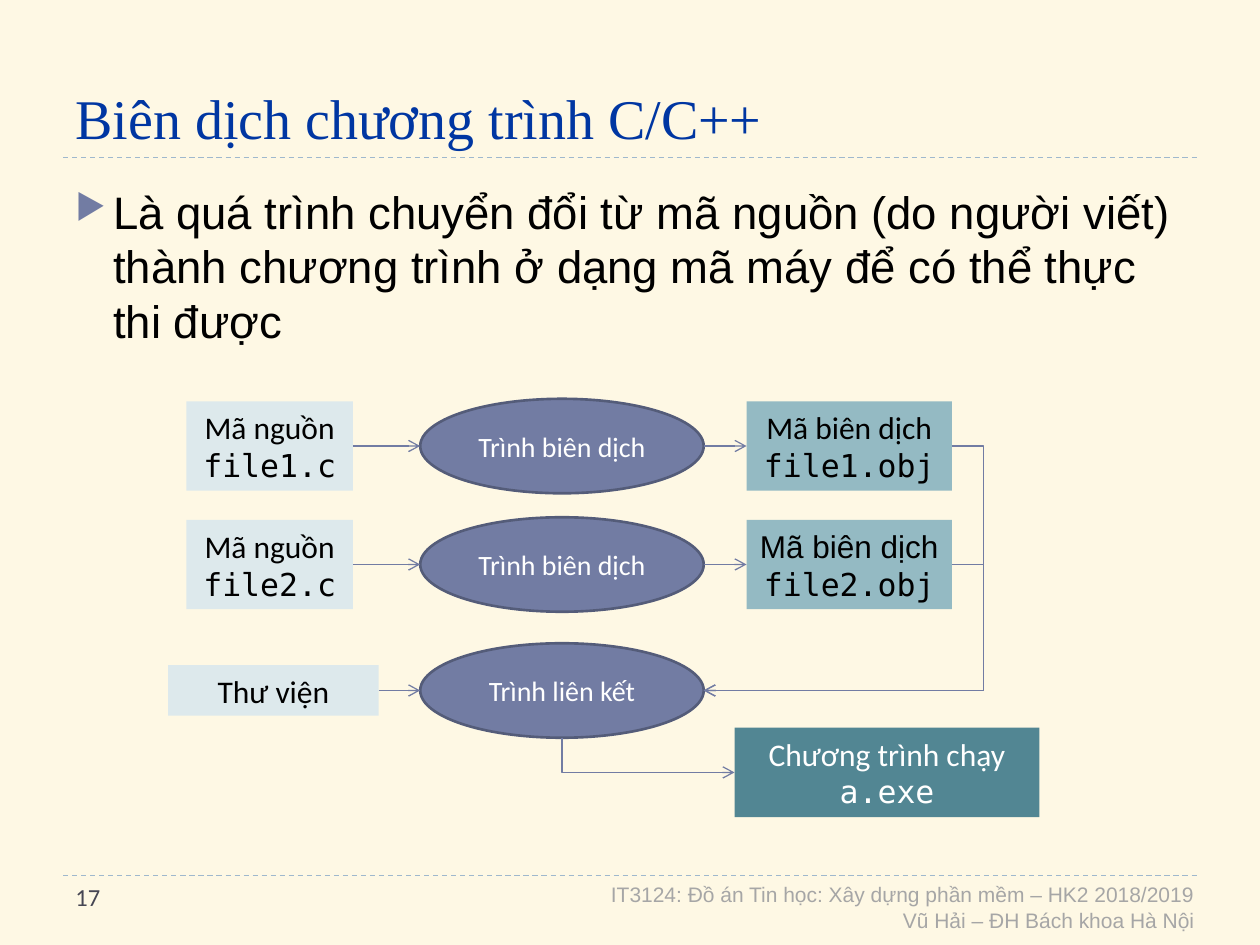
"""Build a slide on how C/C++ programs are compiled and linked."""
import dataclasses

import pptx
import pptx.dml.color
import pptx.enum.dml
import pptx.enum.shapes
import pptx.enum.text
import pptx.oxml.ns
import pptx.util
from lxml import etree

Inches = pptx.util.Inches
ALIGN = pptx.enum.text.PP_ALIGN
ANCHOR = pptx.enum.text.MSO_ANCHOR
SHAPE = pptx.enum.shapes.MSO_SHAPE
CONNECTOR = pptx.enum.shapes.MSO_CONNECTOR


@dataclasses.dataclass(frozen=True)
class Theme:
    background: str = "FEF8E4"
    title: str = "0036A2"
    rule: str = "9FB8CD"
    accent: str = "727CA3"
    accent_edge: str = "545C79"
    source: str = "DDE9EC"
    compiled: str = "94BAC3"
    program: str = "528693"
    dark: str = "000000"
    light: str = "FFFFFF"
    number: str = "464653"
    footer: str = "A6A6A6"
    sans: str = "Arial"
    label: str = "Calibri"
    serif: str = "Times New Roman"
    mono: str = "DejaVu Sans Mono"
    title_size: int = 32
    body_size: int = 26
    box_size: int = 18
    oval_size: int = 16
    number_size: int = 14
    footer_size: int = 12


THEME = Theme()

TITLE = "Biên dịch chương trình C/C++"
BODY = ("Là quá trình chuyển đổi từ mã nguồn (do người viết) thành "
        "chương trình ở dạng mã máy để có thể thực thi được")
FOOTER = ["IT3124: Đồ án Tin học: Xây dựng phần mềm – HK2 2018/2019",
          "Vũ Hải – ĐH Bách khoa Hà Nội"]
NUMBER = "17"

STYLES = {
    "source": (SHAPE.RECTANGLE, 1.32, 0.71, THEME.source, THEME.dark, THEME.box_size),
    "library": (SHAPE.RECTANGLE, 1.67, 0.4, THEME.source, THEME.dark, THEME.box_size),
    "tool": (SHAPE.OVAL, 2.25, 0.75, THEME.accent, THEME.light, THEME.oval_size),
    "compiled": (SHAPE.RECTANGLE, 1.63, 0.71, THEME.compiled, THEME.dark, THEME.box_size),
    "program": (SHAPE.RECTANGLE, 2.42, 0.71, THEME.program, THEME.light, THEME.box_size),
}
COLUMNS = {"source": 2.14, "library": 2.17, "tool": 4.46, "compiled": 6.74, "program": 7.04}
COMPILE_ROWS = [("file1", 3.54, THEME.label), ("file2", 4.48, THEME.sans)]
LINK_ROW, PROGRAM_ROW = 5.48, 6.13
RETURN_X = 7.81
RULE_ROWS = [1.25, 6.95]


def color(value):
    return pptx.dml.color.RGBColor.from_string(value)


def style_paragraph(paragraph, font, size, value, align=ALIGN.LEFT):
    paragraph.alignment = align
    for run in paragraph.runs:
        run.font.name = font
        run.font.size = pptx.util.Pt(size)
        run.font.color.rgb = color(value)


def add_text(slide, area, lines, font, size, value, align=ALIGN.LEFT):
    frame = slide.shapes.add_textbox(*map(Inches, area)).text_frame
    frame.word_wrap = True
    frame.text = "\n".join(lines)
    for paragraph in frame.paragraphs:
        style_paragraph(paragraph, font, size, value, align)
    return frame


def add_bullet(paragraph):
    properties = paragraph._p.get_or_add_pPr()
    properties.set("marL", str(Inches(0.3)))
    properties.set("indent", str(-Inches(0.3)))
    tag = pptx.oxml.ns.qn
    bullet_color = etree.SubElement(properties, tag("a:buClr"))
    etree.SubElement(bullet_color, tag("a:srgbClr"), val=THEME.accent)
    etree.SubElement(properties, tag("a:buSzPct"), val="76000")
    etree.SubElement(properties, tag("a:buChar"), char="▶")


def add_node(slide, style, row, lines, fonts):
    preset, width, height, fill, text_color, size = STYLES[style]
    area = (COLUMNS[style] - width / 2, row - height / 2, width, height)
    shape = slide.shapes.add_shape(preset, *map(Inches, area))
    shape.shadow.inherit = False
    shape.fill.solid()
    shape.fill.fore_color.rgb = color(fill)
    if preset == SHAPE.OVAL:
        shape.line.color.rgb = color(THEME.accent_edge)
        shape.line.width = pptx.util.Pt(1.5)
    else:
        shape.line.fill.background()
    frame = shape.text_frame
    frame.word_wrap = False
    frame.vertical_anchor = ANCHOR.MIDDLE
    frame.text = "\n".join(lines)
    for paragraph, font in zip(frame.paragraphs, fonts):
        style_paragraph(paragraph, font, size, text_color, ALIGN.CENTER)
    return shape


def side(shape, name):
    x = {"left": 0, "right": shape.width}.get(name, shape.width // 2)
    y = {"top": 0, "bottom": shape.height}.get(name, shape.height // 2)
    return shape.left + x, shape.top + y


def add_line(slide, kind, start, end, value, arrow=True):
    connector = slide.shapes.add_connector(kind, *start, *end)
    connector.line.color.rgb = color(value)
    connector.line.width = pptx.util.Pt(0.75)
    tag = pptx.oxml.ns.qn
    if arrow:
        etree.SubElement(connector.line._get_or_add_ln(), tag("a:tailEnd"), type="arrow")
    etree.SubElement(connector._element.spPr, tag("a:effectLst"))
    return connector


def add_arrow(slide, first, second):
    connector = add_line(slide, CONNECTOR.STRAIGHT, side(first, "right"),
                         side(second, "left"), THEME.accent)
    if first.auto_shape_type == SHAPE.RECTANGLE:
        connector.begin_connect(first, 3)
    if second.auto_shape_type == SHAPE.RECTANGLE:
        connector.end_connect(second, 1)


def add_return(slide, compiled, linker):
    start, end = side(compiled, "right"), side(linker, "right")
    connector = add_line(slide, CONNECTOR.ELBOW, start, end, THEME.accent)
    bend = round((start[0] - Inches(RETURN_X)) / (start[0] - end[0]) * 100000)
    guides = connector._element.spPr.find(".//" + pptx.oxml.ns.qn("a:avLst"))
    if guides is None:
        geometry = connector._element.spPr.find(pptx.oxml.ns.qn("a:prstGeom"))
        guides = etree.SubElement(geometry, pptx.oxml.ns.qn("a:avLst"))
    etree.SubElement(guides, pptx.oxml.ns.qn("a:gd"), name="adj1", fmla=f"val {bend}")


def add_corner(slide, linker, program):
    start, end = side(linker, "bottom"), side(program, "left")
    connector = add_line(slide, CONNECTOR.ELBOW, start, end, THEME.accent)
    across, down = end[0] - start[0], end[1] - start[1]
    properties = connector._element.spPr
    properties.find(pptx.oxml.ns.qn("a:prstGeom")).set("prst", "bentConnector2")
    properties.xfrm.set("rot", str(270 * 60000))
    properties.xfrm.set("flipH", "1")
    connector.left = start[0] + (across - down) // 2
    connector.top = start[1] + (down - across) // 2
    connector.width, connector.height = down, across


def add_diagram(slide):
    objects = []
    for name, row, label_font in COMPILE_ROWS:
        source = add_node(slide, "source", row, ["Mã nguồn", f"{name}.c"], [THEME.label, THEME.mono])
        compiler = add_node(slide, "tool", row, ["Trình biên dịch"], [THEME.label])
        compiled = add_node(slide, "compiled", row, ["Mã biên dịch", f"{name}.obj"],
                            [label_font, THEME.mono])
        add_arrow(slide, source, compiler)
        add_arrow(slide, compiler, compiled)
        objects.append(compiled)
    linker = add_node(slide, "tool", LINK_ROW, ["Trình liên kết"], [THEME.label])
    library = add_node(slide, "library", LINK_ROW, ["Thư viện"], [THEME.label])
    program = add_node(slide, "program", PROGRAM_ROW, ["Chương trình chạy", "a.exe"],
                       [THEME.label, THEME.mono])
    add_arrow(slide, library, linker)
    for compiled in objects:
        add_return(slide, compiled, linker)
    add_corner(slide, linker, program)


def main():
    presentation = pptx.Presentation()
    presentation.slide_width, presentation.slide_height = Inches(10), Inches(7.5)
    slide = presentation.slides.add_slide(presentation.slide_layouts[5])
    slide.background.fill.solid()
    slide.background.fill.fore_color.rgb = color(THEME.background)
    for row in RULE_ROWS:
        rule = add_line(slide, CONNECTOR.STRAIGHT, (Inches(0.5), Inches(row)),
                        (Inches(9.5), Inches(row)), THEME.rule, arrow=False)
        rule.line.dash_style = pptx.enum.dml.MSO_LINE.DASH
    title = slide.shapes.title
    title.left, title.top, title.width, title.height = map(Inches, (0.5, 0.17, 9, 1.08))
    title.text_frame.text = TITLE
    title.text_frame.auto_size = pptx.enum.text.MSO_AUTO_SIZE.NONE
    title.text_frame.vertical_anchor = ANCHOR.BOTTOM
    style_paragraph(title.text_frame.paragraphs[0], THEME.serif, THEME.title_size, THEME.title)
    body = add_text(slide, (0.5, 1.41, 9, 1.4), [BODY], THEME.sans, THEME.body_size, THEME.dark)
    add_bullet(body.paragraphs[0])
    add_text(slide, (4.08, 6.95, 5.5, 0.5), FOOTER, THEME.sans, THEME.footer_size,
             THEME.footer, ALIGN.RIGHT)
    add_text(slide, (0.5, 6.95, 2.34, 0.4), [NUMBER], THEME.label, THEME.number_size, THEME.number)
    add_diagram(slide)
    presentation.save("out.pptx")


if __name__ == "__main__":
    main()
